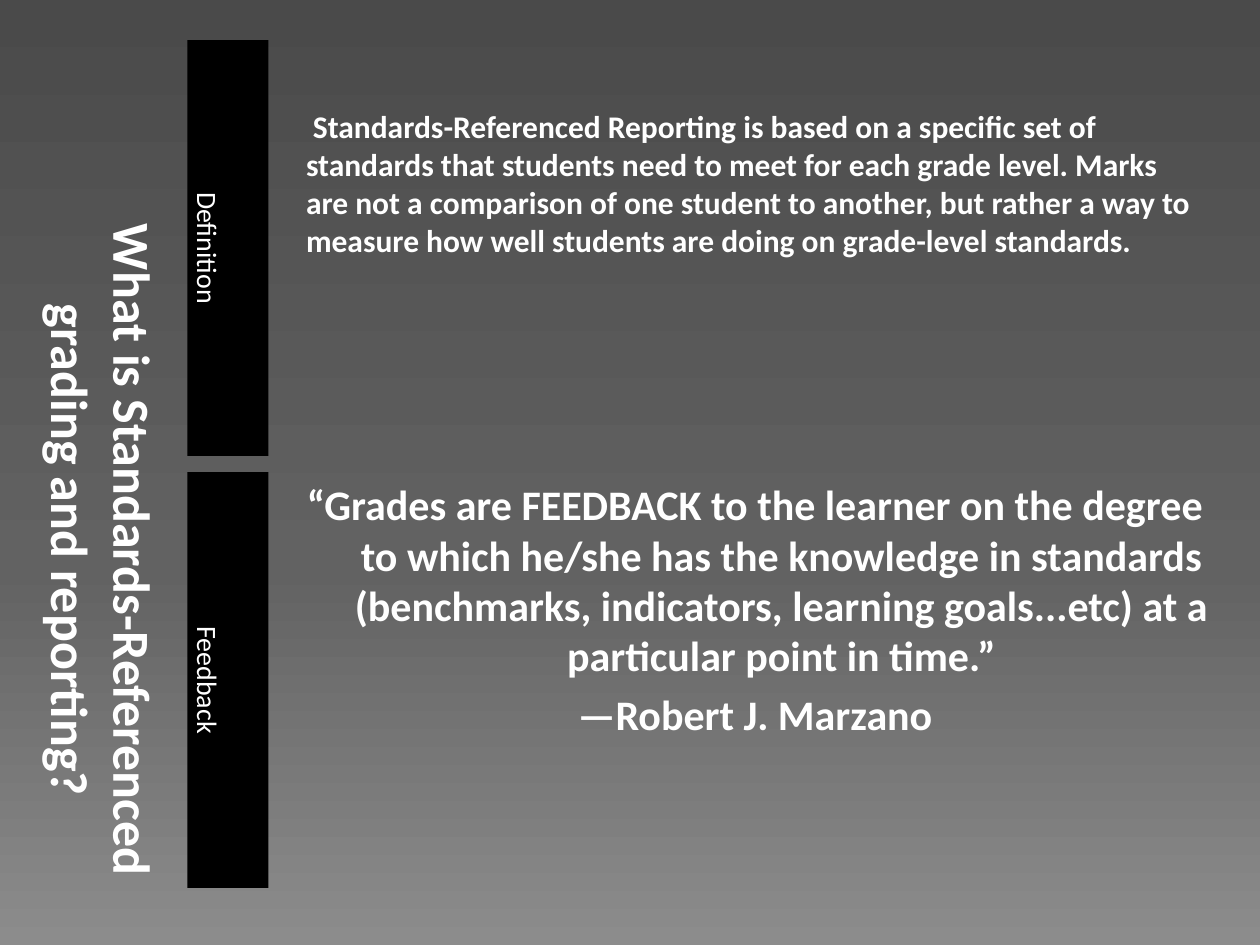
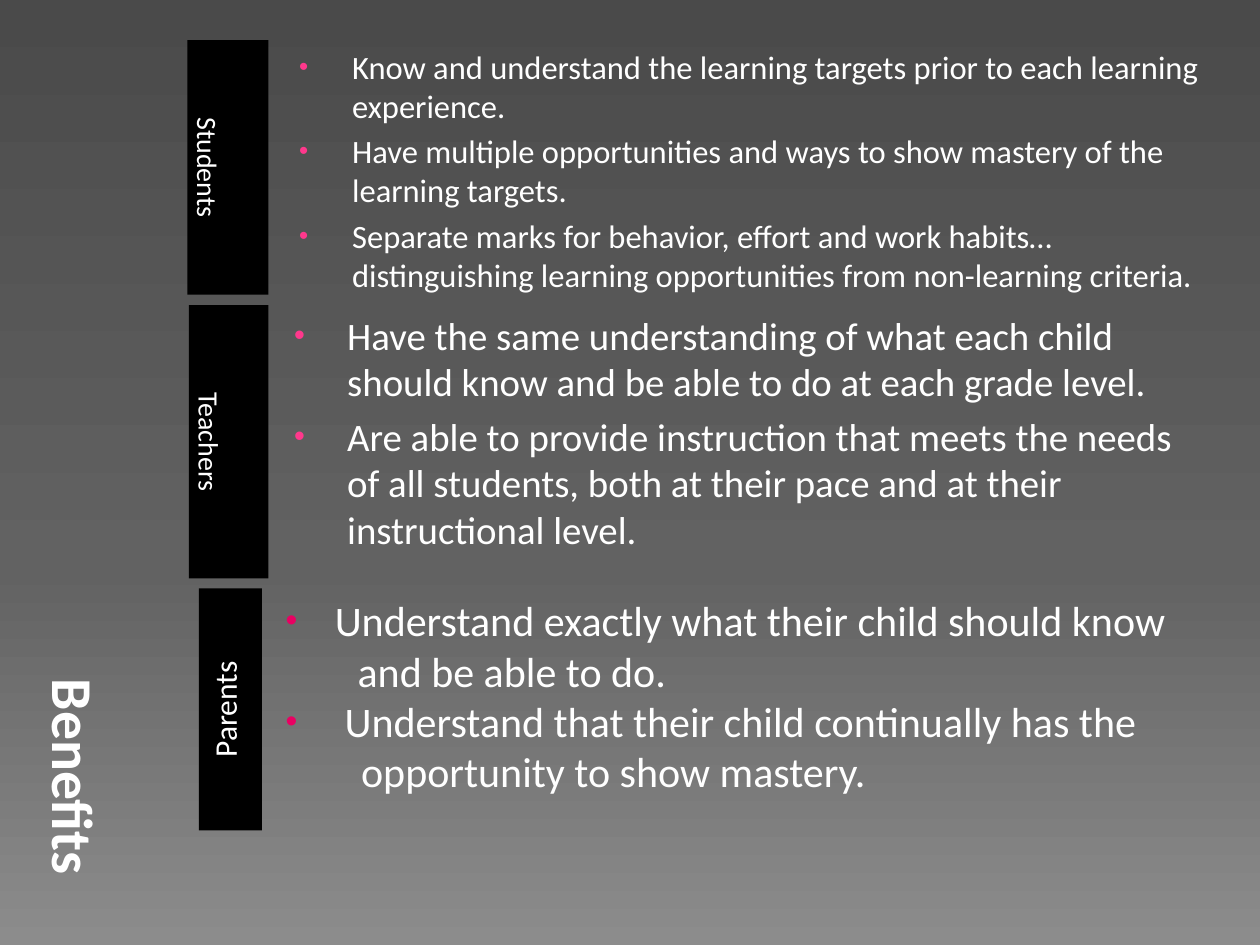
from dataclasses import dataclass

from lxml import etree
from pptx import Presentation, util as u
from pptx.dml.color import RGBColor
from pptx.enum import shapes, text
from pptx.oxml.ns import qn

# Shared style
FONT, WHITE, BLACK = "Calibri", "FFFFFF", "000000"
PINK, ROSE = "FF388C", "E90062"
STOPS = ((0, "4A4A4A"), (60, "626262"), (100, "8C8C8C"))
LEFT, MID, RIGHT = text.PP_ALIGN.LEFT, text.PP_ALIGN.CENTER, text.PP_ALIGN.RIGHT
TOP, LOW = text.MSO_ANCHOR.TOP, text.MSO_ANCHOR.BOTTOM
HANG = (1.24, -1.07)
SIDE, NARROW = 0.25, 0.13  # text insets in cm


@dataclass
class Box:
    left: float
    top: float
    width: float
    height: float


@dataclass
class Para:
    words: str
    size: float
    bold: bool = False
    align: int = LEFT
    indent: tuple[float, float] = (0, 0)
    gap: float = 0  # space before, as a share of the size
    dot: str = ""  # bullet colour


@dataclass
class Label:
    box: Box
    words: str
    size: float = 16
    turn: str = "vert"
    anchor: int = LOW
    inset: float = 0.08


@dataclass
class Body:
    box: Box
    paras: list[Para]


@dataclass
class Page:
    title: Para
    place: Box
    labels: list[Label]
    bodies: list[Body]


def color(code: str) -> RGBColor:
    return RGBColor.from_string(code)


def add_bullet(para, code: str) -> None:
    props = para._p.get_or_add_pPr()
    tint = etree.SubElement(props, qn("a:buClr"))
    etree.SubElement(tint, qn("a:srgbClr"), val=code)
    etree.SubElement(props, qn("a:buSzPct"), val="80000")
    etree.SubElement(props, qn("a:buFont"), typeface="Arial")
    etree.SubElement(props, qn("a:buChar"), char="•")


def write(shape, paras: list[Para], side: float = SIDE, edge: float = NARROW,
          anchor: int = TOP, turn: str = "") -> None:
    frame = shape.text_frame
    frame.word_wrap = True
    frame.vertical_anchor = anchor
    frame.margin_left = frame.margin_right = u.Cm(side)
    frame.margin_top = frame.margin_bottom = u.Cm(edge)
    if turn:
        frame._txBody.bodyPr.set("vert", turn)
    for i, item in enumerate(paras):
        para = frame.add_paragraph() if i else frame.paragraphs[0]
        para.alignment = item.align
        para.space_before = u.Pt(item.size * item.gap)
        props = para._p.get_or_add_pPr()
        for name, size in zip(("marL", "indent"), item.indent):
            props.set(name, str(u.Cm(size)))
        if item.dot:
            add_bullet(para, item.dot)
        run = para.add_run()
        run.text = item.words
        font = run.font
        font.name, font.size, font.bold = FONT, u.Pt(item.size), item.bold
        font.color.rgb = color(WHITE)


def spot(box: Box) -> list[u.Cm]:
    return [u.Cm(n) for n in (box.left, box.top, box.width, box.height)]


def add_label(slide, label: Label) -> None:
    bar = slide.shapes.add_shape(shapes.MSO_SHAPE.RECTANGLE, *spot(label.box))
    bar.shadow.inherit = False
    bar.fill.solid()
    bar.fill.fore_color.rgb = color(BLACK)
    bar.line.fill.background()
    write(bar, [Para(label.words, label.size, align=MID)], label.inset,
          label.inset, label.anchor, label.turn)


def paint(slide) -> None:
    fill = slide.background.fill
    fill.gradient()
    fill.gradient_angle = 270
    stops = next(slide.element.iter(qn("a:gsLst")))
    for old in list(stops):
        stops.remove(old)
    for part, code in STOPS:
        stop = etree.SubElement(stops, qn("a:gs"), pos=str(part * 1000))
        etree.SubElement(stop, qn("a:srgbClr"), val=code)


def add_page(deck, page: Page) -> None:
    slide = deck.slides.add_slide(deck.slide_layouts[6])
    paint(slide)
    head = slide.shapes.add_textbox(*spot(page.place))
    write(head, [page.title], NARROW, NARROW, LOW, "vert")
    for label in page.labels:
        add_label(slide, label)
    for body in page.bodies:
        write(slide.shapes.add_textbox(*spot(body.box)), body.paras)


def quote(words: str) -> Para:
    return Para(words, 24, True, MID, HANG, 0.2)


def point(words: str, size: float) -> Para:
    return Para(words, size, indent=HANG, gap=0.2, dot=PINK)


def line(words: str, start: float, dot: str = "") -> Para:
    return Para(words, 24, indent=(start, -start if dot else 0), dot=dot)


# Slide 1: definition and feedback
MEANING = Page(
    Para("What is Standards-Referenced grading and reporting?", 29.7, True, MID),
    Box(0.69, 4.06, 2.97, 14.05),
    [Label(Box(3.78, 0.81 + 8.71 * i, 1.63, 8.38), words)
     for i, words in enumerate(("Definition", "Feedback"))],
    [
        Body(Box(5.61, 9.52, 19.05, 8.38), [
            quote("“Grades are FEEDBACK to the learner on the degree to which "
                  "he/she has the knowledge in standards (benchmarks, indicators, "
                  "learning goals...etc) at a particular point in time.”"),
            quote("—Robert J. Marzano"),
        ]),
        Body(Box(5.92, 2.03, 18.62, 3.35), [
            Para("Standards-Referenced Reporting is based on a specific set of "
                 "standards that students need to meet for each grade level. Marks "
                 "are not a comparison of one student to another, but rather a way "
                 "to measure how well students are doing on grade-level standards.",
                 18, True, indent=(0, 0.14)),
        ]),
    ],
)

# Slide 2: benefits for each group
GAINS = Page(
    Para("Benefits", 33, True, RIGHT),
    Box(0.69, 0.81, 2.97, 16.96),
    [
        Label(Box(3.78, 0.81, 1.63, 5.13), "Students"),
        Label(Box(3.81, 6.15, 1.6, 5.51), "Teachers"),
        Label(Box(4.01, 11.86, 1.27, 4.88), "Parents", 18, "vert270", TOP, NARROW),
    ],
    [
        Body(Box(5.61, 0.81, 19.05, 5.13), [point(words, 18.6) for words in (
            "Know and understand the learning targets prior to each learning "
            "experience.",
            "Have multiple opportunities and ways to show mastery of the "
            "learning targets.",
            "Separate marks for behavior, effort and work habits…distinguishing "
            "learning opportunities from non-learning criteria.",
        )]),
        Body(Box(5.51, 6.15, 19.05, 5.51), [point(words, 22.2) for words in (
            "Have the same understanding of what each child should know and be "
            "able to do at each grade level.",
            "Are able to provide instruction that meets the needs of all "
            "students, both at their pace and at their instructional level.",
        )]),
        Body(Box(5.51, 11.86, 18.85, 5.13), [
            line("Understand exactly what their child should know", 0.99, ROSE),
            line("and be able to do.", 1.45),
            line("Understand that their child continually has the", 1.19, ROSE),
            line("opportunity to show mastery.", 1.52),
        ]),
    ],
)


def main() -> None:
    deck = Presentation()
    deck.slide_width, deck.slide_height = u.Cm(25.4), u.Cm(19.05)
    for page in (MEANING, GAINS):
        add_page(deck, page)
    deck.save("out.pptx")


if __name__ == "__main__":
    main()
